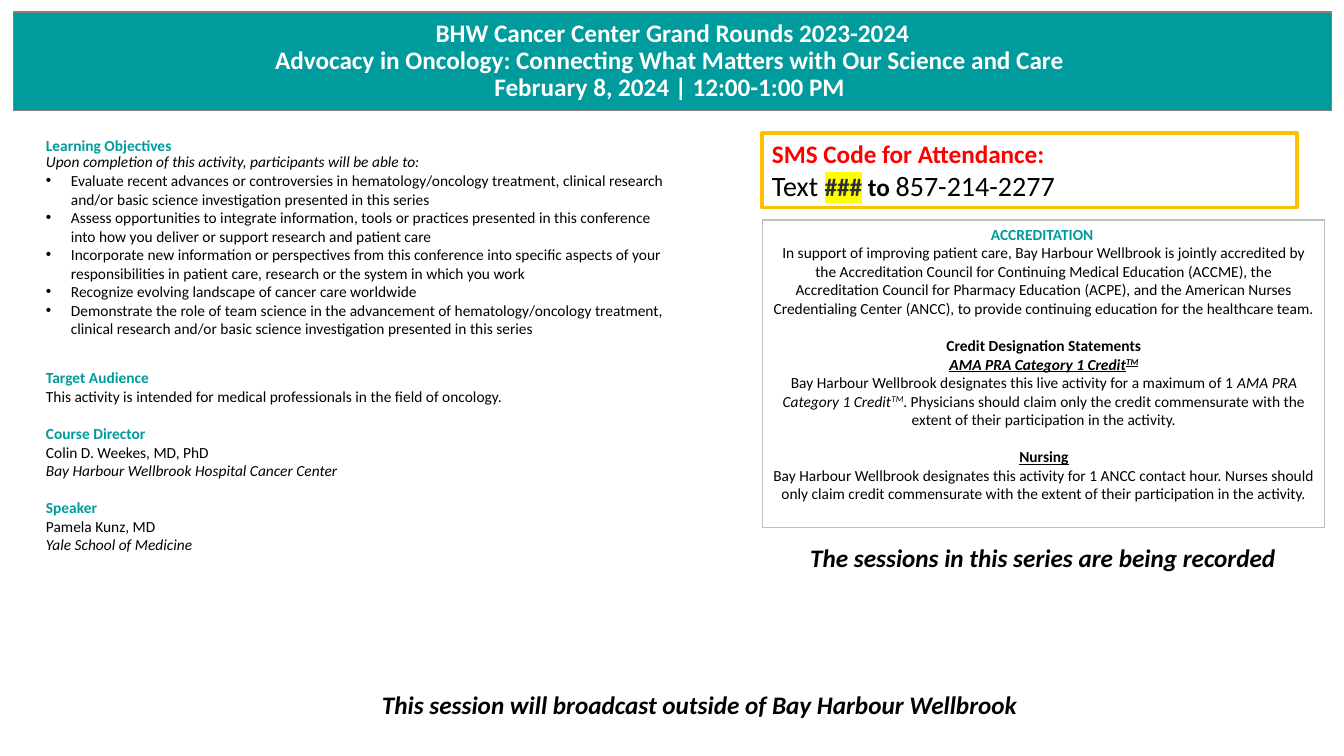
import dataclasses

import pptx
import pptx.dml.color
import pptx.enum.shapes
import pptx.enum.text
import pptx.oxml
import pptx.oxml.ns
import pptx.util

SCALE = 914400 / 100.8
CENTER = pptx.enum.text.PP_ALIGN.CENTER
LEFT = pptx.enum.text.PP_ALIGN.LEFT
TOP = pptx.enum.text.MSO_ANCHOR.TOP
MIDDLE = pptx.enum.text.MSO_ANCHOR.MIDDLE


@dataclasses.dataclass(frozen=True)
class Theme:
    """Colours, fonts and type sizes of the slide."""
    font: str = "Calibri"
    bullet_font: str = "Arial"
    teal: str = "009B9C"
    white: str = "FFFFFF"
    ink: str = "000000"
    alert: str = "FF0000"
    code: str = "2F2F2F"
    marker: str = "FFFF00"
    gold: str = "FFC000"
    silver: str = "BFBFBF"
    grey: str = "808080"
    body: int = 11
    title: int = 18
    phone: int = 20
    line_gap: float = 13.4
    section_gap: int = 22


THEME = Theme()
HEADING = {"bold": True, "color": THEME.teal}
BOLD = {"bold": True}
ITALIC = {"italic": True}
NOTICE = {"size": THEME.title, "bold": True, "italic": True}
BANNER = {"size": THEME.title, "bold": True, "color": THEME.white}
CREDIT = {"bold": True, "italic": True, "underline": True}
TIGHT = {"line_spacing": 0.9}
SPACED = {"space_before": pptx.util.Pt(THEME.line_gap)}
SECTION = {"space_before": pptx.util.Pt(THEME.section_gap)}

OBJECTIVES = (
    "Evaluate recent advances or controversies in hematology/oncology treatment, clinical research "
    "and/or basic science investigation presented in this series",
    "Assess opportunities to integrate information, tools or practices presented in this conference "
    "into how you deliver or support research and patient care",
    "Incorporate new information or perspectives from this conference into specific aspects of your "
    "responsibilities in patient care, research or the system in which you work",
    "Recognize evolving landscape of cancer care worldwide",
    "Demonstrate the role of team science in the advancement of hematology/oncology treatment, "
    "clinical research and/or basic science investigation presented in this series",
)


def px(length):
    """Turn a length in px into EMU."""
    return pptx.util.Emu(round(length * SCALE))


def rgb(color):
    """Return the colour object for a hex value."""
    return pptx.dml.color.RGBColor.from_string(color)


def apply(target, values):
    """Set every value of a dict as an attribute of the target."""
    for key, value in values.items():
        setattr(target, key, value)


def add_run(paragraph, text, color=THEME.ink, size=THEME.body, highlight=None, raised=False, **style):
    """Append a formatted run to a paragraph."""
    run = paragraph.add_run()
    run.text = text
    run.font.color.rgb = rgb(color)
    apply(run.font, {"name": THEME.font, "size": pptx.util.Pt(size), **style})
    properties = run.font._element
    if raised:
        properties.set("baseline", "30000")
    if highlight:
        mark = pptx.oxml.parse_xml(
            f'<a:highlight {pptx.oxml.ns.nsdecls("a")}><a:srgbClr val="{highlight}"/></a:highlight>')
        properties.find(pptx.oxml.ns.qn("a:latin")).addprevious(mark)


def add_bullet(paragraph):
    """Give a paragraph a hanging bullet."""
    properties = paragraph._p.get_or_add_pPr()
    properties.set("marL", str(px(25)))
    properties.set("indent", str(-px(25)))
    for tag in (f'buFont {pptx.oxml.ns.nsdecls("a")} typeface="{THEME.bullet_font}"',
                f'buChar {pptx.oxml.ns.nsdecls("a")} char="•"'):
        properties.append(pptx.oxml.parse_xml(f"<a:{tag}/>"))


def write(frame, lines, align=LEFT, anchor=TOP):
    """Fill a text frame with lines of (format, runs)."""
    apply(frame, {"word_wrap": True, "vertical_anchor": anchor})
    for index, (layout, runs) in enumerate(lines):
        paragraph = frame.paragraphs[0] if index == 0 else frame.add_paragraph()
        if layout.get("bullet"):
            add_bullet(paragraph)
        apply(paragraph, {"alignment": align,
                          **{key: value for key, value in layout.items() if key != "bullet"}})
        for text, style in runs:
            add_run(paragraph, text, **style)


def add_panel(slide, box, line, weight, fill=None):
    """Draw a bordered rectangle and return its text frame."""
    panel = slide.shapes.add_shape(pptx.enum.shapes.MSO_SHAPE.RECTANGLE, *map(px, box))
    panel.shadow.inherit = False
    if fill:
        panel.fill.solid()
        panel.fill.fore_color.rgb = rgb(fill)
    else:
        panel.fill.background()
    panel.line.color.rgb = rgb(line)
    panel.line.width = pptx.util.Pt(weight)
    return panel.text_frame


def add_banner(slide, box):
    """Place the teal banner with series, topic and date."""
    titles = ("BHW Cancer Center Grand Rounds 2023-2024",
              "Advocacy in Oncology: Connecting What Matters with Our Science and Care ",
              "February 8, 2024 | 12:00-1:00 PM ")
    write(add_panel(slide, box, THEME.grey, 0.75, THEME.teal),
          [(TIGHT, [(title, BANNER)]) for title in titles], CENTER, MIDDLE)


def add_overview(slide, box):
    """Place the objectives, audience, director and speaker."""
    write(slide.shapes.add_textbox(*map(px, box)).text_frame, [
        (TIGHT, [("Learning Objectives", HEADING)]),
        (TIGHT, [("Upon completion of this activity, participants will be able to:", ITALIC)]),
        *[({"bullet": True}, [(objective, {})]) for objective in OBJECTIVES],
        (SECTION, [("Target Audience", HEADING)]),
        ({}, [("This activity is intended for medical professionals in the field of oncology.", {})]),
        (SPACED, [("Course Director", HEADING)]),
        ({}, [("Colin D. Weekes, MD, PhD", {})]),
        ({}, [("Bay Harbour Wellbrook Hospital Cancer Center", ITALIC)]),
        (SPACED, [("Speaker", HEADING)]),
        ({}, [("Pamela Kunz, MD", {})]),
        ({}, [("Yale School of Medicine", ITALIC)]),
    ])


def add_accreditation(slide, box):
    """Place the accreditation and credit statements."""
    write(add_panel(slide, box, THEME.silver, 0.75), [
        ({}, [("ACCREDITATION ", HEADING)]),
        ({}, [("In support of improving patient care, Bay Harbour Wellbrook is jointly accredited by the "
               "Accreditation Council for Continuing Medical Education (ACCME), the Accreditation Council "
               "for Pharmacy Education (ACPE), and the American Nurses Credentialing Center (ANCC), to "
               "provide continuing education for the healthcare team.", {})]),
        (SPACED, [("Credit Designation Statements", BOLD)]),
        ({}, [("AMA PRA Category 1 Credit", CREDIT), ("TM", {**CREDIT, "raised": True})]),
        ({}, [("Bay Harbour Wellbrook designates this live activity for a maximum of 1 ", {}),
              ("AMA PRA Category 1 Credit", ITALIC), ("TM", {**ITALIC, "raised": True}),
              (". Physicians should claim only the credit commensurate with the extent of their "
               "participation in the activity.", {})]),
        (SPACED, [("Nursing", {"bold": True, "underline": True})]),
        ({}, [("Bay Harbour Wellbrook designates this activity for 1 ANCC contact hour. Nurses should only "
               "claim credit commensurate with the extent of their participation in the activity.", {})]),
    ], CENTER)


def add_attendance(slide, box):
    """Place the gold-framed attendance code."""
    strong = {"size": THEME.title, "bold": True}
    number = {"size": THEME.phone}
    write(add_panel(slide, box, THEME.gold, 2.25), [
        ({}, [("SMS Code for Attendance:", {**strong, "color": THEME.alert})]),
        ({}, [("Text ", number),
              ("###", {**strong, "color": THEME.code, "highlight": THEME.marker}),
              (" to ", strong), ("857-214-2277", number)]),
    ])


def add_notice(slide, box, notice, align):
    """Place a one-line bold italic notice."""
    write(slide.shapes.add_textbox(*map(px, box)).text_frame, [({}, [(notice, NOTICE)])], align)


def main():
    """Build the slide and save it."""
    deck = pptx.Presentation()
    apply(deck, {"slide_width": px(1344), "slide_height": px(756)})
    slide = deck.slides.add_slide(deck.slide_layouts[6])
    add_banner(slide, (13, 12, 1319, 99))
    add_overview(slide, (36, 133, 643, 587))
    add_accreditation(slide, (763, 220, 562, 308))
    add_attendance(slide, (762, 133, 535, 75))
    add_notice(slide, (372, 684, 671, 40),
               "This session will broadcast outside of Bay Harbour Wellbrook", LEFT)
    add_notice(slide, (762, 537, 562, 40), "The sessions in this series are being recorded", CENTER)
    deck.save("out.pptx")


if __name__ == "__main__":
    main()
